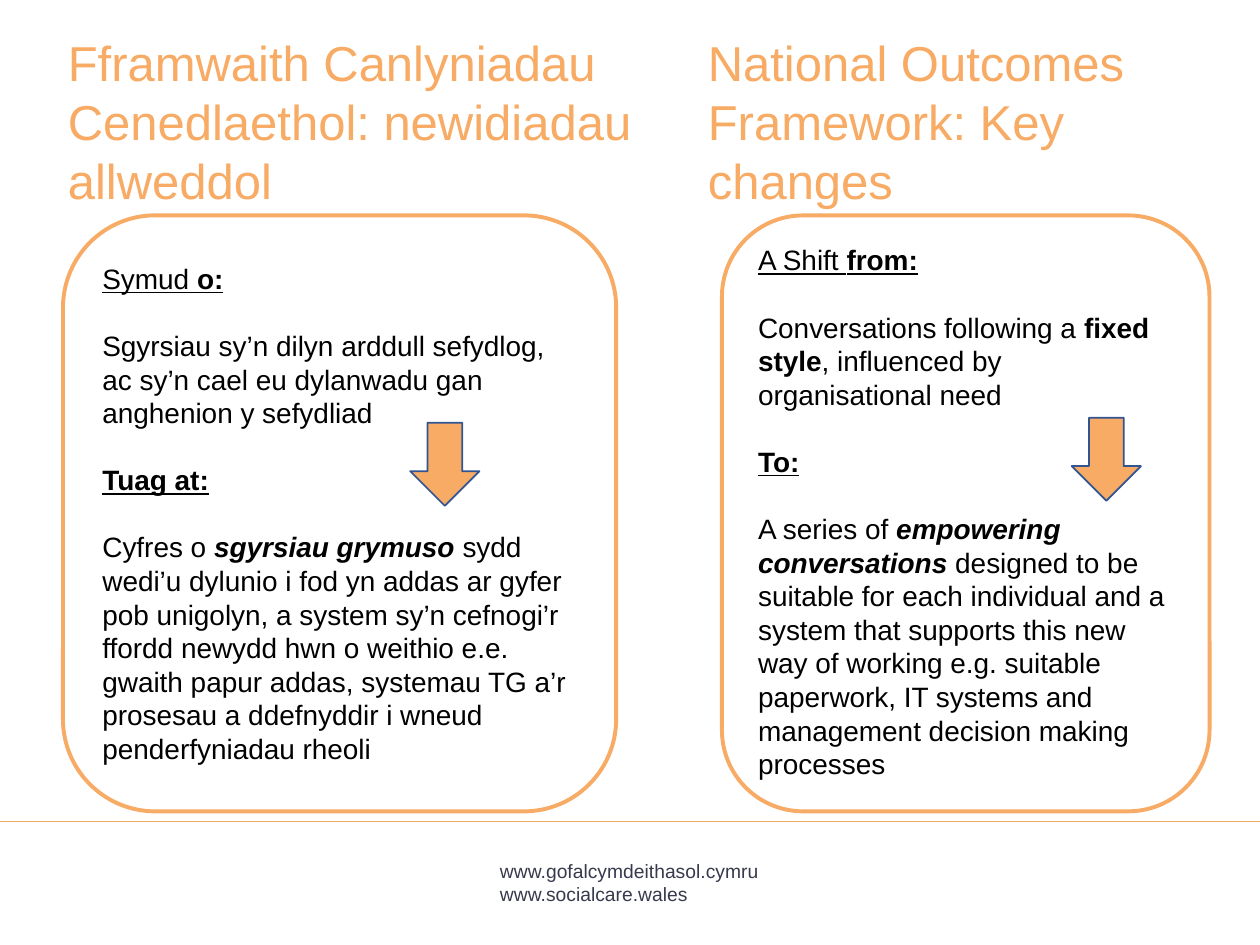
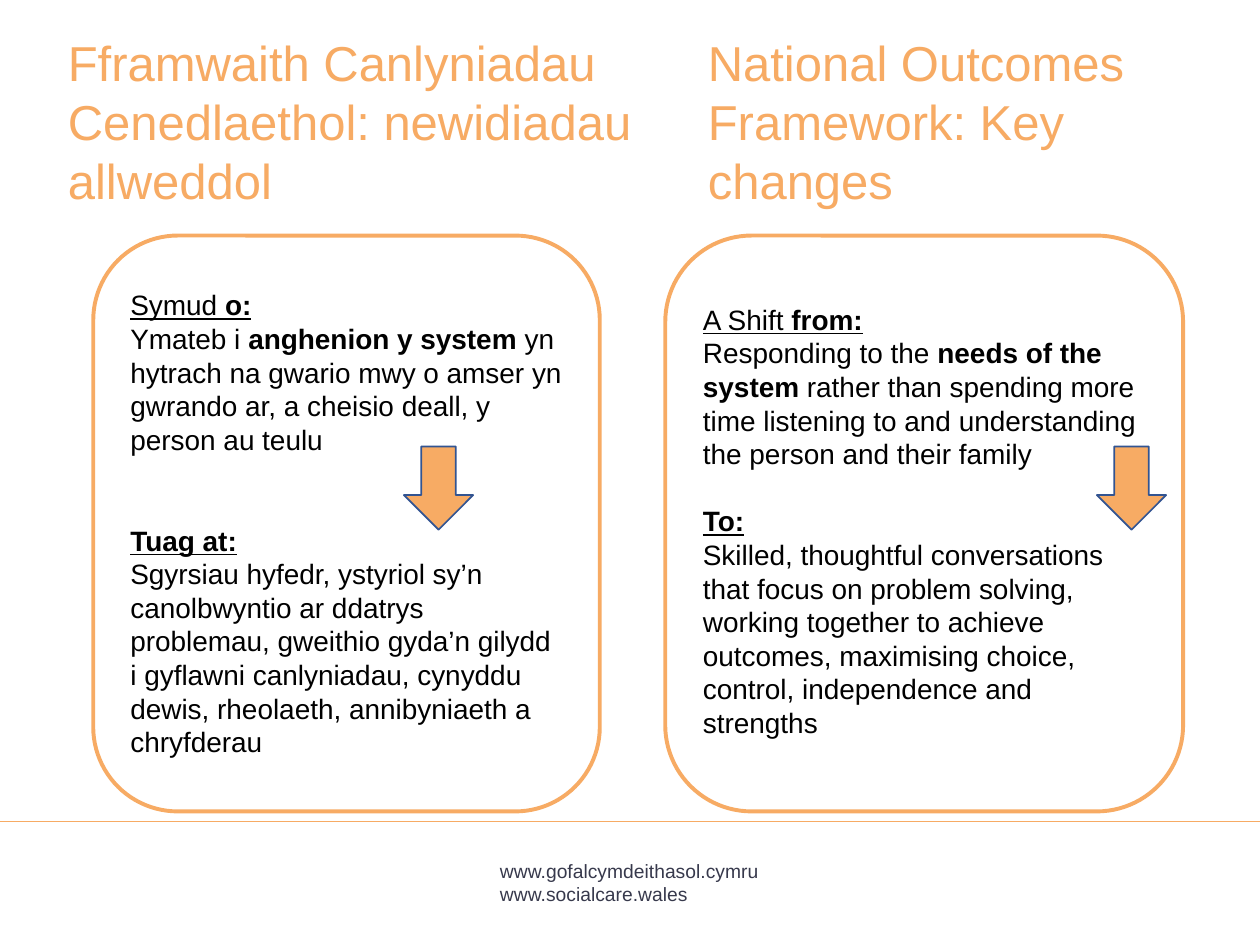
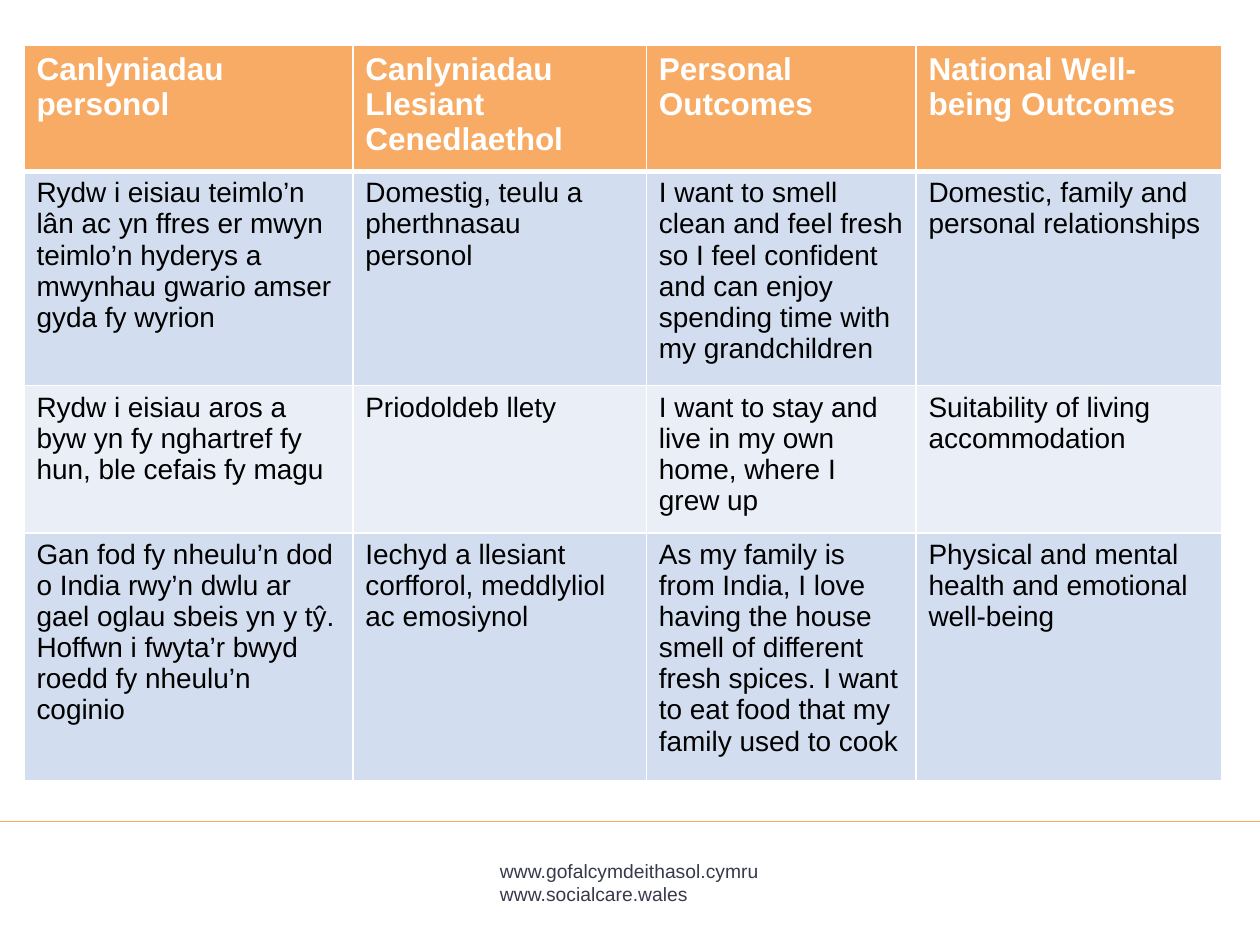
from dataclasses import dataclass
from typing import NamedTuple

import pptx
import pptx.dml.color
import pptx.enum.shapes
import pptx.enum.text
import pptx.oxml
import pptx.oxml.ns
import pptx.presentation
import pptx.shapes.base
import pptx.slide
import pptx.table
import pptx.text.text
import pptx.util

Inches = pptx.util.Inches
Pt = pptx.util.Pt
RGBColor = pptx.dml.color.RGBColor
SHAPE = pptx.enum.shapes.MSO_SHAPE

ORANGE = RGBColor(0xF7, 0xAB, 0x64)
ARROW_EDGE = RGBColor(0x32, 0x54, 0x91)
FOOTER_GREY = RGBColor(0x37, 0x39, 0x4C)
BLACK = RGBColor(0, 0, 0)
WHITE = RGBColor(0xFF, 0xFF, 0xFF)
BAND_DARK = RGBColor(0xD2, 0xDE, 0xEF)
BAND_LIGHT = RGBColor(0xEA, 0xEF, 0xF7)

FONT = "Arial"
BODY_LINE = 19.2  # points taken by one line of 16 pt text

WELSH_TITLE = "Fframwaith Canlyniadau Cenedlaethol: newidiadau allweddol"
ENGLISH_TITLE = "National Outcomes Framework: Key changes"
WEBSITES = ["www.gofalcymdeithasol.cymru", "www.socialcare.wales"]


class Run(NamedTuple):
    text: str
    bold: bool = False
    italic: bool = False
    underline: bool = False


class Para(NamedTuple):
    runs: list[Run]
    lines_before: int = 0


class Box(NamedTuple):
    left: float
    top: float
    width: float
    height: float

    def lengths(self) -> list[pptx.util.Length]:
        return [Inches(side) for side in self]


@dataclass
class Panel:
    box: Box
    text_drop: float
    paras: list[Para]
    arrow_at: tuple[float, float]


WELSH_FROM = [Run("Symud ", underline=True), Run("o:", bold=True, underline=True)]
ENGLISH_FROM = [Run("A Shift ", underline=True), Run("from:", bold=True, underline=True)]
WELSH_TO = [Run("Tuag at:", bold=True, underline=True)]
ENGLISH_TO = [Run("To:", bold=True, underline=True)]

STYLE_PANELS = [
    Panel(
        Box(0.5, 1.71, 4.39, 4.73), 0.15,
        [
            Para(WELSH_FROM),
            Para([Run("Sgyrsiau sy’n dilyn arddull sefydlog, ac sy’n cael eu dylanwadu "
                      "gan anghenion y sefydliad")], 1),
            Para(WELSH_TO, 1),
            Para([
                Run("Cyfres o "),
                Run("sgyrsiau grymuso ", bold=True, italic=True),
                Run("sydd wedi’u dylunio i fod yn addas ar gyfer pob unigolyn, a system "
                    "sy’n cefnogi’r ffordd newydd hwn o weithio e.e. gwaith papur addas, "
                    "systemau TG a’r prosesau a ddefnyddir i wneud penderfyniadau rheoli"),
            ], 1),
        ],
        (3.2, 3.41),
    ),
    Panel(
        Box(5.73, 1.71, 3.87, 4.73), 0.03,
        [
            Para(ENGLISH_FROM),
            Para([
                Run("Conversations following a "),
                Run("fixed style", bold=True),
                Run(", influenced by organisational need"),
            ], 1),
            Para(ENGLISH_TO, 1),
            Para([
                Run("A series of "),
                Run("empowering conversations ", bold=True, italic=True),
                Run("designed to be suitable for each individual and a system that "
                    "supports this new way of working e.g. suitable paperwork, IT systems "
                    "and management decision making processes"),
            ], 1),
        ],
        (8.45, 3.37),
    ),
]

NEEDS_PANELS = [
    Panel(
        Box(0.74, 1.87, 4.02, 4.57), 0.22,
        [
            Para(WELSH_FROM),
            Para([
                Run("Ymateb i "),
                Run("anghenion y system ", bold=True),
                Run("yn hytrach na gwario mwy o amser yn gwrando ar, a cheisio deall, "
                    "y person au teulu"),
            ]),
            Para(WELSH_TO, 2),
            Para([Run("Sgyrsiau hyfedr, ystyriol sy’n canolbwyntio ar ddatrys problemau, "
                      "gweithio gyda’n gilydd i gyflawni canlyniadau, cynyddu dewis, "
                      "rheolaeth, annibyniaeth a chryfderau")]),
        ],
        (3.15, 3.6),
    ),
    Panel(
        Box(5.28, 1.87, 4.11, 4.57), 0.33,
        [
            Para(ENGLISH_FROM),
            Para([
                Run("Responding to the "),
                Run("needs of the system ", bold=True),
                Run("rather than spending more time listening to and understanding the "
                    "person and their family"),
            ]),
            Para(ENGLISH_TO, 1),
            Para([Run("Skilled, thoughtful conversations that focus on problem solving, "
                      "working together to achieve outcomes, maximising choice, control, "
                      "independence and strengths")]),
        ],
        (8.65, 3.6),
    ),
]

COLUMN_WIDTHS = [2.61, 2.33, 2.14, 2.43]
ROW_HEIGHTS = [0.94, 1.7, 1.17, 1.97]
OUTCOMES = [
    ["Canlyniadau personol", "Canlyniadau Llesiant Cenedlaethol",
     "Personal Outcomes", "National Well-being Outcomes"],
    ["Rydw i eisiau teimlo’n lân ac yn ffres er mwyn teimlo’n hyderys a mwynhau gwario "
     "amser gyda fy wyrion",
     "Domestig, teulu a pherthnasau personol",
     "I want to smell clean and feel fresh so I feel confident and can enjoy spending "
     "time with my grandchildren",
     "Domestic, family and personal relationships"],
    ["Rydw i eisiau aros a byw yn fy nghartref fy hun, ble cefais fy magu",
     "Priodoldeb llety",
     "I want to stay and live in my own home, where I grew up",
     "Suitability of living accommodation"],
    ["Gan fod fy nheulu’n dod o India rwy’n dwlu ar gael oglau sbeis yn y tŷ. Hoffwn i "
     "fwyta’r bwyd roedd fy nheulu’n coginio",
     "Iechyd a llesiant corfforol, meddlyliol ac emosiynol",
     "As my family is from India, I love having the house smell of different fresh "
     "spices. I want to eat food that my family used to cook",
     "Physical and mental health and emotional well-being"],
]


def write_paras(frame: pptx.text.text.TextFrame, paras: list[Para], size: float,
                color: RGBColor) -> None:
    frame.word_wrap = True
    for index, para in enumerate(paras):
        paragraph = frame.add_paragraph() if index else frame.paragraphs[0]
        paragraph.alignment = pptx.enum.text.PP_ALIGN.LEFT
        if para.lines_before:
            paragraph.space_before = Pt(para.lines_before * BODY_LINE)
        for part in para.runs:
            run = paragraph.add_run()
            run.text = part.text
            font = run.font
            font.name, font.size = FONT, Pt(size)
            font.color.rgb = color
            font.bold, font.italic, font.underline = part.bold, part.italic, part.underline


def add_text(slide: pptx.slide.Slide, box: Box, lines: list[str], size: float,
             color: RGBColor) -> None:
    frame = slide.shapes.add_textbox(*box.lengths()).text_frame
    write_paras(frame, [Para([Run(line)]) for line in lines], size, color)


def add_outlined(slide: pptx.slide.Slide, preset: SHAPE, box: Box, edge: RGBColor,
                 weight: float) -> pptx.shapes.base.BaseShape:
    shape = slide.shapes.add_shape(preset, *box.lengths())
    shape.shadow.inherit = False
    shape.fill.background()
    shape.line.color.rgb = edge
    shape.line.width = Pt(weight)
    return shape


def add_panel(slide: pptx.slide.Slide, panel: Panel) -> None:
    outline = add_outlined(slide, SHAPE.ROUNDED_RECTANGLE, panel.box, ORANGE, 2.25)
    frame = outline.text_frame
    frame.vertical_anchor = pptx.enum.text.MSO_ANCHOR.TOP
    frame.margin_top = Inches(panel.text_drop)
    frame.margin_bottom = 0
    write_paras(frame, panel.paras, 16, BLACK)


def add_down_arrow(slide: pptx.slide.Slide, left: float, top: float) -> None:
    arrow = add_outlined(slide, SHAPE.RIGHT_ARROW, Box(left, top, 0.66, 0.55), ARROW_EDGE, 1)
    arrow.fill.solid()
    arrow.fill.fore_color.rgb = ORANGE
    arrow.rotation = 90


def add_footed_slide(deck: pptx.presentation.Presentation) -> pptx.slide.Slide:
    """Add a blank slide carrying the shared rule and website footer."""
    slide = deck.slides.add_slide(deck.slide_layouts[6])
    add_text(slide, Box(3.87, 6.77, 2.26, 0.46), WEBSITES, 11, FOOTER_GREY)
    rule = slide.shapes.add_connector(pptx.enum.shapes.MSO_CONNECTOR.STRAIGHT,
                                      0, Inches(6.52), Inches(10), Inches(6.52))
    rule.line.color.rgb = ORANGE
    rule.line.width = Pt(1)
    element = rule._element
    element.remove(element.find(pptx.oxml.ns.qn("p:style")))
    element.spPr.append(pptx.oxml.parse_xml(
        f'<a:effectLst {pptx.oxml.ns.nsdecls("a")}/>'))
    return slide


def add_changes_slide(deck: pptx.presentation.Presentation, panels: list[Panel]) -> None:
    slide = add_footed_slide(deck)
    add_text(slide, Box(0.44, 0.21, 4.78, 1.5), [WELSH_TITLE], 28, ORANGE)
    add_text(slide, Box(5.52, 0.21, 3.87, 1.3), [ENGLISH_TITLE], 28, ORANGE)
    for panel in panels:
        add_panel(slide, panel)
    for panel in panels:
        add_down_arrow(slide, *panel.arrow_at)


def border_cell(cell: pptx.table._Cell, weights: dict[str, float]) -> None:
    properties = cell._tc.get_or_add_tcPr()
    for side, weight in weights.items():
        properties.append(pptx.oxml.parse_xml(
            f'<a:ln{side} {pptx.oxml.ns.nsdecls("a")} w="{Pt(weight)}">'
            f'<a:solidFill><a:srgbClr val="{WHITE}"/></a:solidFill></a:ln{side}>'))


def add_outcomes_slide(deck: pptx.presentation.Presentation) -> None:
    slide = add_footed_slide(deck)
    box = Box(0.19, 0.36, sum(COLUMN_WIDTHS), sum(ROW_HEIGHTS))
    table = slide.shapes.add_table(len(ROW_HEIGHTS), len(COLUMN_WIDTHS), *box.lengths()).table
    for column, width in zip(table.columns, COLUMN_WIDTHS):
        column.width = Inches(width)
    for row_index, (row, height) in enumerate(zip(table.rows, ROW_HEIGHTS)):
        row.height = Inches(height)
        header = row_index == 0
        band = ORANGE if header else BAND_DARK if row_index % 2 else BAND_LIGHT
        weights = {"L": 1, "R": 1, "T": 3 if row_index == 1 else 1, "B": 3 if header else 1}
        for cell, text in zip(row.cells, OUTCOMES[row_index]):
            border_cell(cell, weights)
            cell.fill.solid()
            cell.fill.fore_color.rgb = band
            write_paras(cell.text_frame, [Para([Run(text, bold=header)])],
                        18 if header else 16, WHITE if header else BLACK)


def main() -> None:
    deck = pptx.Presentation()
    deck.slide_width, deck.slide_height = Inches(10), Inches(7.5)
    add_changes_slide(deck, STYLE_PANELS)
    add_changes_slide(deck, NEEDS_PANELS)
    add_outcomes_slide(deck)
    deck.save("out.pptx")


if __name__ == "__main__":
    main()
